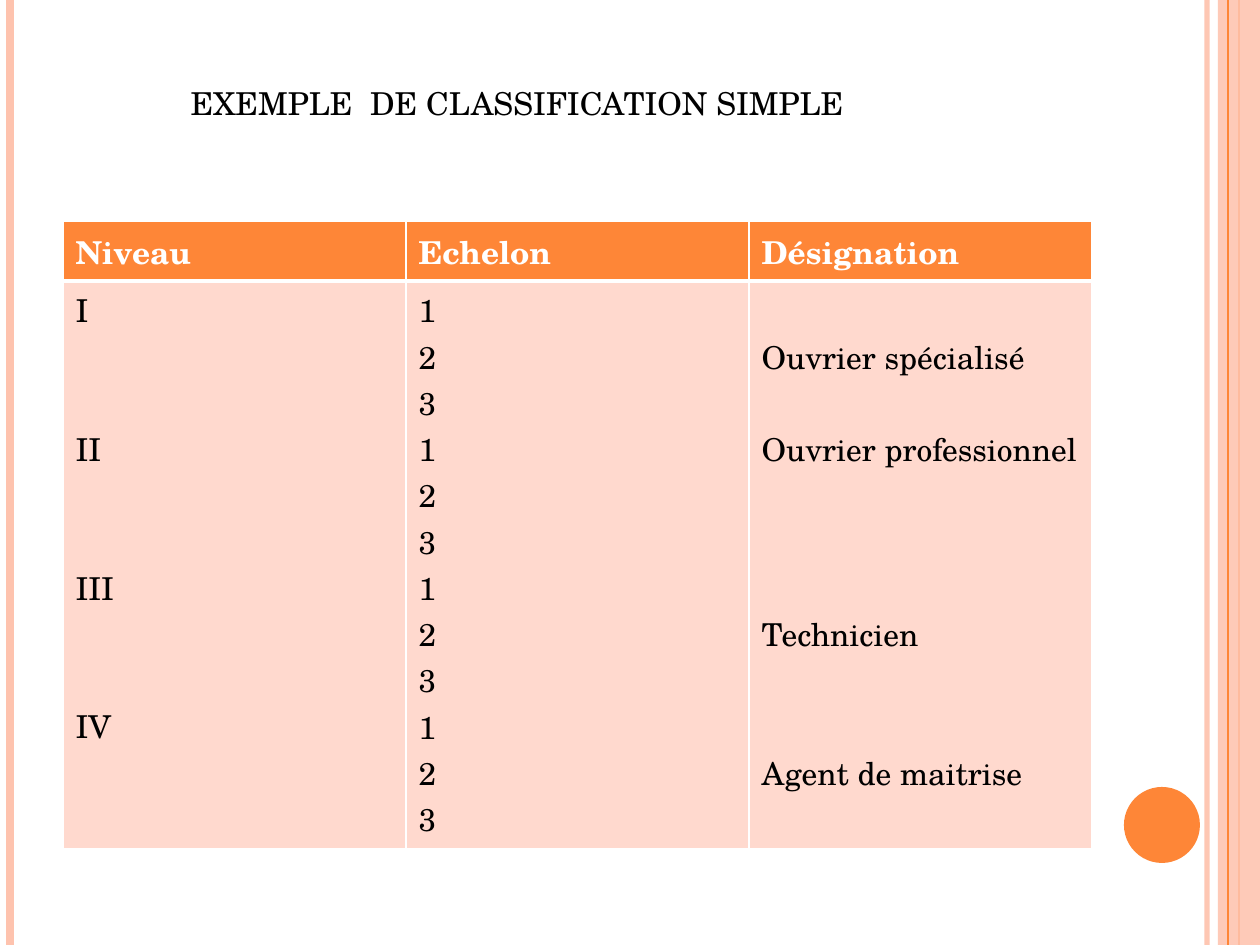
"""Build a slide showing a simple job classification table."""
import dataclasses

import lxml.etree
import pptx
import pptx.dml.color
import pptx.enum.shapes
import pptx.enum.text
import pptx.oxml
import pptx.oxml.ns
import pptx.util

PX = 914400 / 126
SLIDE_WIDTH, SLIDE_HEIGHT = 1260, 945
HEADINGS = ("Niveau", "Echelon", "Désignation")
LEVELS = ("I", "II", "III", "IV")
STEPS = 3
BODY_COLUMNS = (
    [(STEPS * index, level) for index, level in enumerate(LEVELS)],
    [(line, str(line % STEPS + 1)) for line in range(STEPS * len(LEVELS))],
    [(1, "Ouvrier spécialisé"), (3, "Ouvrier professionnel"),
     (7, "Technicien"), (10, "Agent de maitrise")],
)


@dataclasses.dataclass(frozen=True)
class Theme:
    font: str = "TeX Gyre Schola"
    size: int = 18
    line_pitch: float = 26.4
    cell_margin: float = 3.6
    accent: str = "FE8637"
    pale: str = "FEC3AE"
    body_fill: str = "FFD9CE"
    white: str = "FFFFFF"
    black: str = "000000"


THEME = Theme()


def px(*lengths):
    return [pptx.util.Emu(round(length * PX)) for length in lengths]


def rgb(color):
    return pptx.dml.color.RGBColor.from_string(color)


def set_alpha(properties, percent):
    color = next(properties.iter(pptx.oxml.ns.qn("a:srgbClr")))
    alpha = lxml.etree.SubElement(color, pptx.oxml.ns.qn("a:alpha"))
    alpha.set("val", str(percent * 1000))


def format_paragraph(paragraph, color, bold=False):
    paragraph.alignment = pptx.enum.text.PP_ALIGN.LEFT
    for run in paragraph.runs:
        run.font.name = THEME.font
        run.font.size = pptx.util.Pt(THEME.size)
        run.font.bold = bold
        run.font.color.rgb = rgb(color)


def add_stripe(slide, x, color, width, opacity=100):
    stripe = slide.shapes.add_connector(
        pptx.enum.shapes.MSO_CONNECTOR.STRAIGHT, *px(x, 0, x, SLIDE_HEIGHT))
    stripe.line.color.rgb = rgb(color)
    stripe.line.width = pptx.util.Pt(width)
    properties = stripe._element.spPr
    if opacity < 100:
        set_alpha(properties, opacity)
    lxml.etree.SubElement(properties, pptx.oxml.ns.qn("a:effectLst"))


def add_filled_shape(slide, kind, box, color, opacity=100):
    shape = slide.shapes.add_shape(kind, *px(*box))
    shape.shadow.inherit = False
    shape.fill.solid()
    shape.fill.fore_color.rgb = rgb(color)
    shape.line.fill.background()
    if opacity < 100:
        set_alpha(shape._element.spPr, opacity)


def add_decoration(slide):
    shapes = pptx.enum.shapes.MSO_SHAPE
    add_stripe(slide, 1207, THEME.pale, 3, 93)
    add_stripe(slide, 10, THEME.pale, 4.5)
    add_stripe(slide, 1239, THEME.accent, 1.5)
    add_filled_shape(slide, shapes.RECTANGLE, (1218, 0, 42, SLIDE_HEIGHT), THEME.pale, 87)
    add_stripe(slide, 1228, THEME.accent, 0.75)
    add_filled_shape(slide, shapes.OVAL, (1124, 787, 76, 76), THEME.accent)


def set_title(slide, text):
    title = slide.shapes.title
    title.left, title.top, title.width, title.height = px(178, 78, 816, 50)
    frame = title.text_frame
    frame.text = text
    frame.word_wrap = True
    frame.auto_size = pptx.enum.text.MSO_AUTO_SIZE.SHAPE_TO_FIT_TEXT
    frame.vertical_anchor = pptx.enum.text.MSO_ANCHOR.TOP
    format_paragraph(frame.paragraphs[0], THEME.black)


def style_cell(cell, fill, top, bottom):
    cell.fill.solid()
    cell.fill.fore_color.rgb = rgb(fill)
    properties = cell._tc.get_or_add_tcPr()
    borders = (("L", 1), ("R", 1), ("T", top), ("B", bottom))
    for position, (side, width) in enumerate(borders):
        properties.insert(position, pptx.oxml.parse_xml(
            f'<a:ln{side} {pptx.oxml.ns.nsdecls("a")} w="{pptx.util.Pt(width)}">'
            f'<a:solidFill><a:srgbClr val="{THEME.white}"/></a:solidFill></a:ln{side}>'))


def fill_body_cell(cell, entries):
    first_line = entries[0][0]
    cell.margin_top = pptx.util.Pt(THEME.cell_margin + first_line * THEME.line_pitch)
    cell.text_frame.text = "\n".join(text for _, text in entries)
    previous = first_line - 1
    for paragraph, (line, _) in zip(cell.text_frame.paragraphs, entries):
        skipped = line - previous - 1
        paragraph.space_before = pptx.util.Pt(skipped * THEME.line_pitch)
        format_paragraph(paragraph, THEME.black)
        previous = line


def add_classification_table(slide):
    column_width, row_heights = 343, (60, 568)
    box = (63, 221, column_width * len(HEADINGS), sum(row_heights))
    table = slide.shapes.add_table(2, len(HEADINGS), *px(*box)).table
    for row, height in zip(table.rows, px(*row_heights)):
        row.height = height
    for index, (heading, entries) in enumerate(zip(HEADINGS, BODY_COLUMNS)):
        table.columns[index].width = px(column_width)[0]
        header, body = table.cell(0, index), table.cell(1, index)
        header.text_frame.text = heading
        format_paragraph(header.text_frame.paragraphs[0], THEME.white, bold=True)
        fill_body_cell(body, entries)
        style_cell(header, THEME.accent, top=1, bottom=3)
        style_cell(body, THEME.body_fill, top=3, bottom=1)


def main():
    presentation = pptx.Presentation()
    presentation.slide_width, presentation.slide_height = px(SLIDE_WIDTH, SLIDE_HEIGHT)
    slide = presentation.slides.add_slide(presentation.slide_layouts[5])
    add_decoration(slide)
    add_classification_table(slide)
    set_title(slide, "EXEMPLE  DE CLASSIFICATION SIMPLE")
    presentation.save("out.pptx")


if __name__ == "__main__":
    main()
